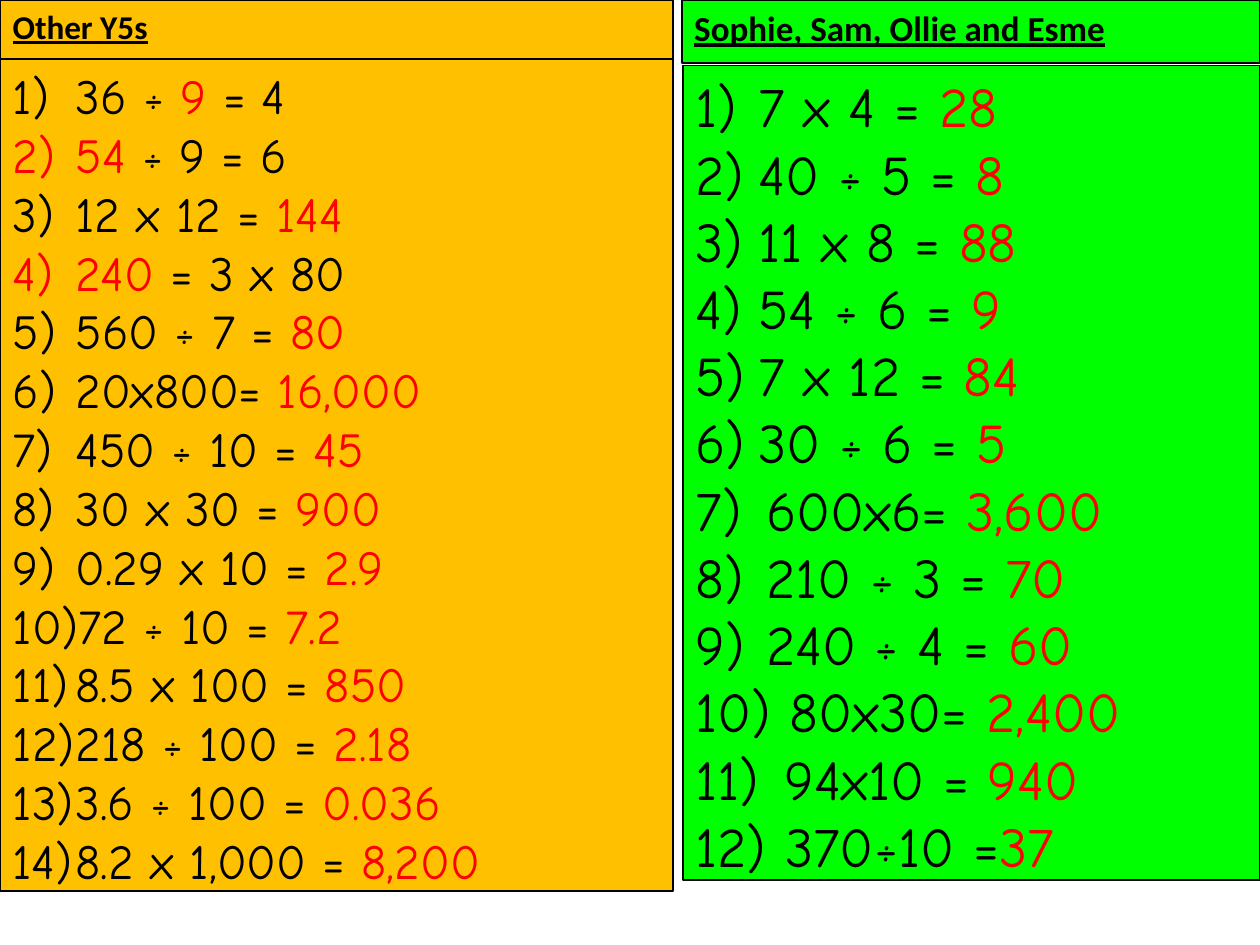
from dataclasses import dataclass

from lxml import etree
from pptx import Presentation
from pptx import util as u
from pptx.dml.color import RGBColor
from pptx.enum import text
from pptx.oxml.ns import qn


@dataclass(frozen=True)
class Theme:
    ink: RGBColor = RGBColor(0x00, 0x00, 0x00)
    answer: RGBColor = RGBColor(0xFF, 0x00, 0x00)
    amber: RGBColor = RGBColor(0xFF, 0xC0, 0x00)
    green: RGBColor = RGBColor(0x00, 0xFF, 0x00)
    heading_font: str = "Calibri"
    sum_font: str = "Comic Neue"
    border: float = 1


@dataclass(frozen=True)
class Box:
    left: float
    top: float
    width: float
    height: float


@dataclass(frozen=True)
class Numbering:
    """A run of numbered sums; every second piece between bars is an answer."""
    sums: tuple[str, ...]
    hang: float = 0.5
    start: int = 1


@dataclass(frozen=True)
class Group:
    heading: str
    heading_box: Box
    heading_size: float
    sums_box: Box
    sums_size: float
    fill: RGBColor
    numberings: tuple[Numbering, ...]
    heading_idx: int
    sums_idx: int


THEME = Theme()

GROUPS = (
    Group(
        "Other Y5s", Box(0, 0, 5.34, 0.42), 19, Box(0, 0.47, 5.34, 6.7), 28, THEME.amber,
        (Numbering((
            "36 ÷| 9 |= 4", "|54| ÷ 9 = 6", "12 x 12 = |144", "|240| = 3 x 80",
            "560 ÷ 7 = |80", "20x800= |16,000", "450 ÷ 10 = |45", "30 x 30 = |900",
            "0.29 x 10 = |2.9", "72 ÷ 10 = |7.2", "8.5 x 100 = |850",
            "218 ÷ 100 = |2.18", "3.6 ÷ 100 = |0.036", "8.2 x 1,000 = |8,200")),),
        heading_idx=1, sums_idx=2),
    Group(
        "Sophie, Sam, Ollie and Esme", Box(5.41, 0, 4.59, 0.44), 20,
        Box(5.42, 0.52, 4.58, 6.56), 32, THEME.green,
        (Numbering(("7 x 4 = |28", "40 ÷ 5 = |8", "11 x 8 = |88",
                    "54 ÷ 6 = |9", "7 x 12 = |84", "30 ÷ 6 = |5")),
         Numbering(("600x6= |3,600", "210 ÷ 3 = |70", "240 ÷ 4 = |60",
                    " 80x30= |2,400", " 94x10 = |940", " 370÷10 =|37"),
                   hang=0.56, start=7)),
        heading_idx=3, sums_idx=4),
)


def style_panel(panel, box: Box, fill: RGBColor) -> None:
    panel.left, panel.top = u.Inches(box.left), u.Inches(box.top)
    panel.width, panel.height = u.Inches(box.width), u.Inches(box.height)
    panel.fill.solid()
    panel.fill.fore_color.rgb = fill
    panel.line.color.rgb = THEME.ink
    panel.line.width = u.Pt(THEME.border)
    frame = panel.text_frame
    frame.word_wrap = True
    frame.vertical_anchor = text.MSO_ANCHOR.TOP
    frame.auto_size = text.MSO_AUTO_SIZE.SHAPE_TO_FIT_TEXT


def style_run(run, font: str, size: float, color: RGBColor) -> None:
    run.font.name = font
    run.font.size = u.Pt(size)
    run.font.color.rgb = color


def number_paragraph(paragraph, numbering: Numbering) -> None:
    paragraph.space_before = u.Pt(0)
    props = paragraph._p.get_or_add_pPr()
    props.set("marL", str(u.Inches(numbering.hang)))
    props.set("indent", str(-u.Inches(numbering.hang)))
    etree.SubElement(props, qn("a:buFontTx"))
    bullet = etree.SubElement(props, qn("a:buAutoNum"), type="arabicParenR")
    if numbering.start > 1:
        bullet.set("startAt", str(numbering.start))


def write_heading(panel, group: Group) -> None:
    style_panel(panel, group.heading_box, group.fill)
    panel.text_frame.text = group.heading
    paragraph = panel.text_frame.paragraphs[0]
    paragraph.space_before = u.Pt(0)
    title = paragraph.runs[0]
    style_run(title, THEME.heading_font, group.heading_size, THEME.ink)
    title.font.bold = title.font.underline = True


def write_sums(panel, group: Group) -> None:
    style_panel(panel, group.sums_box, group.fill)
    frame = panel.text_frame
    lines = [(numbering, line) for numbering in group.numberings for line in numbering.sums]
    for row, (numbering, line) in enumerate(lines):
        paragraph = frame.add_paragraph() if row else frame.paragraphs[0]
        number_paragraph(paragraph, numbering)
        for place, piece in enumerate(line.split("|")):
            if piece:
                run = paragraph.add_run()
                run.text = piece
                color = THEME.answer if place % 2 else THEME.ink
                style_run(run, THEME.sum_font, group.sums_size, color)


def main() -> None:
    deck = Presentation()
    deck.slide_width, deck.slide_height = u.Inches(10), u.Inches(7.5)

    # Comparison layout: two headings, each with its list
    slide = deck.slides.add_slide(deck.slide_layouts[4])
    panels = {panel.placeholder_format.idx: panel for panel in slide.placeholders}
    for group in GROUPS:
        write_heading(panels[group.heading_idx], group)
        write_sums(panels[group.sums_idx], group)

    # The overall title is unused
    unused = slide.shapes.title.element
    unused.getparent().remove(unused)

    deck.save("out.pptx")


if __name__ == "__main__":
    main()
